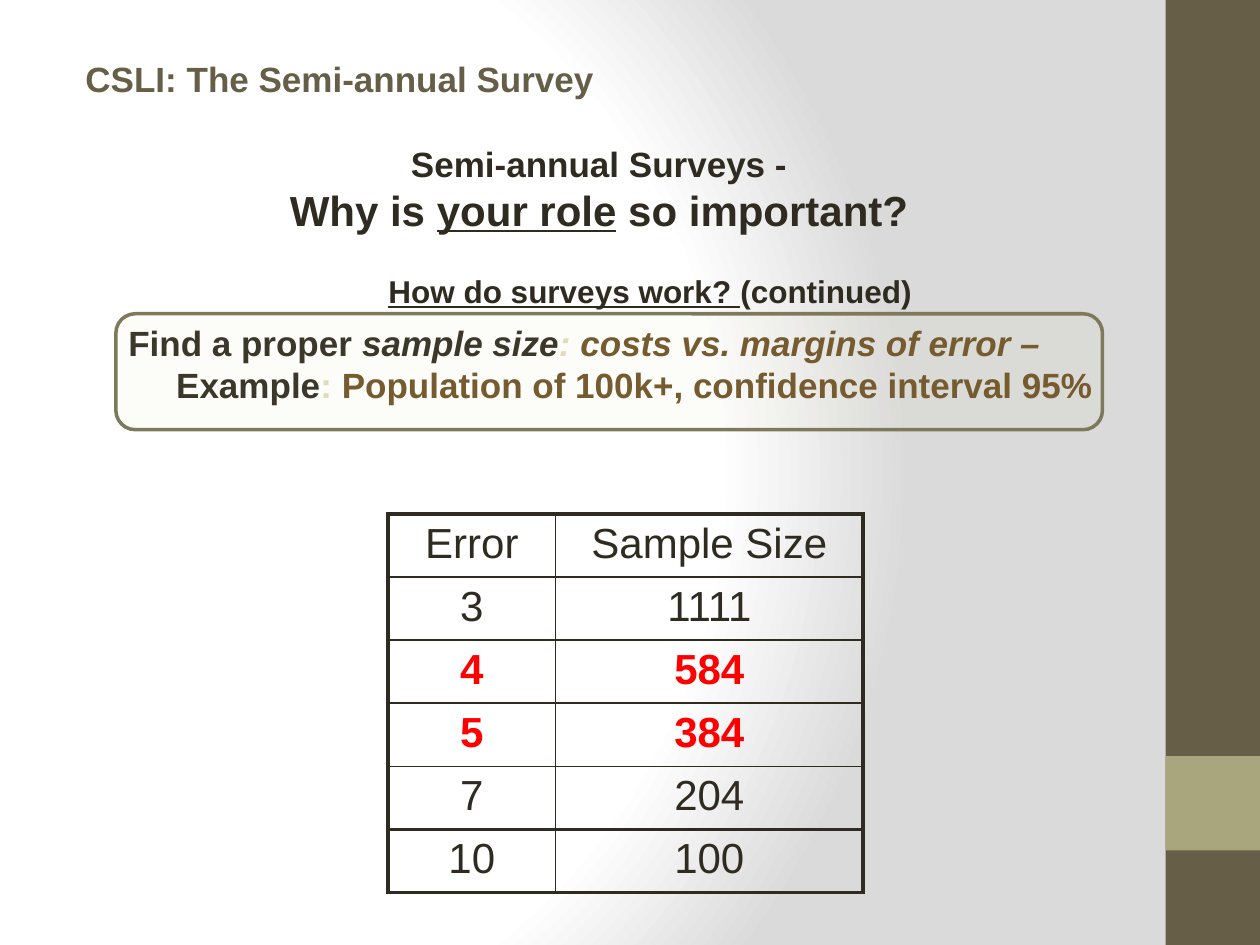
from dataclasses import dataclass

from lxml.etree import SubElement
from pptx import Presentation
from pptx.dml.color import RGBColor
from pptx.enum.shapes import MSO_SHAPE
from pptx.enum.text import MSO_ANCHOR, PP_ALIGN
from pptx.oxml import parse_xml
from pptx.oxml.ns import nsdecls, qn
from pptx.util import Inches, Pt

DARK = RGBColor(0x2F, 0x2B, 0x20)
OLIVE = RGBColor(0x67, 0x5E, 0x47)
SAGE = RGBColor(0xA9, 0xA5, 0x7C)
CREAM = RGBColor(0xDF, 0xDC, 0xB7)
BROWN = RGBColor(0x6D, 0x52, 0x25)
FRAME = RGBColor(0x7D, 0x7A, 0x5C)
RED = RGBColor(0xFF, 0x00, 0x00)
FONT = "Arial"
HANGING = Inches(0.38)
THIN, THICK = Pt(1), Pt(2.25)


@dataclass
class Span:
    text: str
    size: float
    color: RGBColor = DARK
    bold: bool = True
    italic: bool = False
    underline: bool = False


@dataclass
class Box:
    left: float
    top: float
    width: float
    height: float

    def lengths(self) -> tuple:
        return tuple(Inches(n) for n in (self.left, self.top, self.width, self.height))


def write_spans(paragraph, spans: list[Span], alignment=PP_ALIGN.LEFT) -> None:
    paragraph.alignment = alignment
    for span in spans:
        run = paragraph.add_run()
        run.text = span.text
        font = run.font
        font.name, font.size, font.color.rgb = FONT, Pt(span.size), span.color
        font.bold, font.italic, font.underline = span.bold, span.italic, span.underline


def add_text(slide, box: Box, lines: list[list[Span]], alignment=PP_ALIGN.LEFT):
    text_frame = slide.shapes.add_textbox(*box.lengths()).text_frame
    text_frame.word_wrap = True
    for index, spans in enumerate(lines):
        paragraph = text_frame.add_paragraph() if index else text_frame.paragraphs[0]
        write_spans(paragraph, spans, alignment)
    return text_frame


def add_block(slide, box: Box, color: RGBColor, kind=MSO_SHAPE.RECTANGLE):
    shape = slide.shapes.add_shape(kind, *box.lengths())
    shape.shadow.inherit = False
    shape.fill.solid()
    shape.fill.fore_color.rgb = color
    shape.line.fill.background()
    return shape


def set_borders(cell, widths: dict[str, int]) -> None:
    properties = cell._tc.get_or_add_tcPr()
    for index, (side, width) in enumerate(widths.items()):
        line = parse_xml(
            f'<a:{side} {nsdecls("a")} w="{width}"><a:solidFill>'
            f'<a:srgbClr val="{DARK}"/></a:solidFill></a:{side}>')
        properties.insert(index, line)


def add_sample_table(slide, box: Box, rows: list[tuple[str, str]]) -> None:
    table = slide.shapes.add_table(len(rows), 2, *box.lengths()).table
    table.first_row = table.horz_banding = False
    table.columns[0].width, table.columns[1].width = Inches(1.33), Inches(2.44)
    thick_lines = {0, len(rows) - 1, len(rows)}
    for row_index, row in enumerate(rows):
        highlighted = row[0] in ("4", "5")
        for column_index, text in enumerate(row):
            cell = table.cell(row_index, column_index)
            cell.fill.background()
            span = Span(text, 24, RED if highlighted else DARK, bold=highlighted)
            write_spans(cell.text_frame.paragraphs[0], [span], PP_ALIGN.CENTER)
            set_borders(cell, {
                "lnL": THIN if column_index else THICK,
                "lnR": THICK if column_index else THIN,
                "lnT": THICK if row_index in thick_lines else THIN,
                "lnB": THICK if row_index + 1 in thick_lines else THIN,
            })


def set_background(slide) -> None:
    stops = "".join(
        f'<a:gs pos="{position}"><a:srgbClr val="{color}"/></a:gs>'
        for position, color in ((0, "FFFFFF"), (75000, "FFFFFF"), (100000, "DADADA")))
    background = parse_xml(
        f'<p:bg {nsdecls("p", "a")}><p:bgPr><a:gradFill rotWithShape="1">'
        f'<a:gsLst>{stops}</a:gsLst><a:path path="circle">'
        '<a:fillToRect l="20000" t="50000" r="100000" b="50000"/></a:path>'
        '</a:gradFill><a:effectLst/></p:bgPr></p:bg>')
    slide._element.cSld.insert(0, background)


def main() -> None:
    presentation = Presentation()
    presentation.slide_width, presentation.slide_height = Inches(10), Inches(7.5)
    slide = presentation.slides.add_slide(presentation.slide_layouts[6])
    set_background(slide)

    # Side band
    add_block(slide, Box(9.25, 0, 0.75, 7.5), OLIVE)
    add_block(slide, Box(9.25, 6, 0.75, 0.75), SAGE)

    # How surveys work
    text_frame = add_text(slide, Box(0.92, 2.21, 8.1, 1.47), [
        [Span("How do surveys work? ", 18, underline=True), Span("(continued)", 18)],
        [Span("Find a proper ", 20),
         Span("sample size", 20, italic=True),
         Span(": ", 20, CREAM, italic=True),
         Span("costs vs. margins of error – ", 20, BROWN, italic=True),
         Span("Example", 20),
         Span(": ", 20, CREAM),
         Span("Population of 100k+, confidence interval 95%", 20, BROWN)],
    ])
    text_frame.margin_top = Inches(0.15)
    heading, explanation = text_frame.paragraphs
    heading.alignment = PP_ALIGN.CENTER
    heading.line_spacing = heading.space_after = Pt(7)
    for paragraph, indent in ((heading, 0), (explanation, -HANGING)):
        properties = paragraph._p.get_or_add_pPr()
        properties.set("marL", str(HANGING))
        properties.set("indent", str(indent))

    # Sample sizes by margin of error
    add_sample_table(slide, Box(3.08, 4.08, 3.77, 3), [
        ("Error", "Sample Size"), ("3", "1111"), ("4", "584"),
        ("5", "384"), ("7", "204"), ("10", "100")])

    # Titles
    title = add_text(slide, Box(0.58, 0.42, 9, 0.45),
                     [[Span("CSLI: The Semi-annual Survey", 20, OLIVE)]])
    title.vertical_anchor = MSO_ANCHOR.MIDDLE
    title.paragraphs[0].line_spacing = 0.9
    subtitle = add_text(slide, Box(2.08, 1.08, 5.5, 0.84), [
        [Span("Semi-annual Surveys -", 20)],
        [Span("Why is ", 24), Span("your role", 24, underline=True),
         Span(" so important?", 24)],
    ], PP_ALIGN.CENTER)
    subtitle.paragraphs[0]._p.get_or_add_pPr().set("marR", str(Inches(0.15)))

    # Tinted frame around the example
    frame = add_block(slide, Box(0.92, 2.49, 7.83, 0.92), CREAM,
                      MSO_SHAPE.ROUNDED_RECTANGLE)
    frame.line.color.rgb = FRAME
    frame.line.width = Pt(2)
    tint = frame._element.spPr.find(qn("a:solidFill")).find(qn("a:srgbClr"))
    SubElement(tint, qn("a:alpha")).set("val", "7000")

    presentation.save("out.pptx")


if __name__ == "__main__":
    main()
